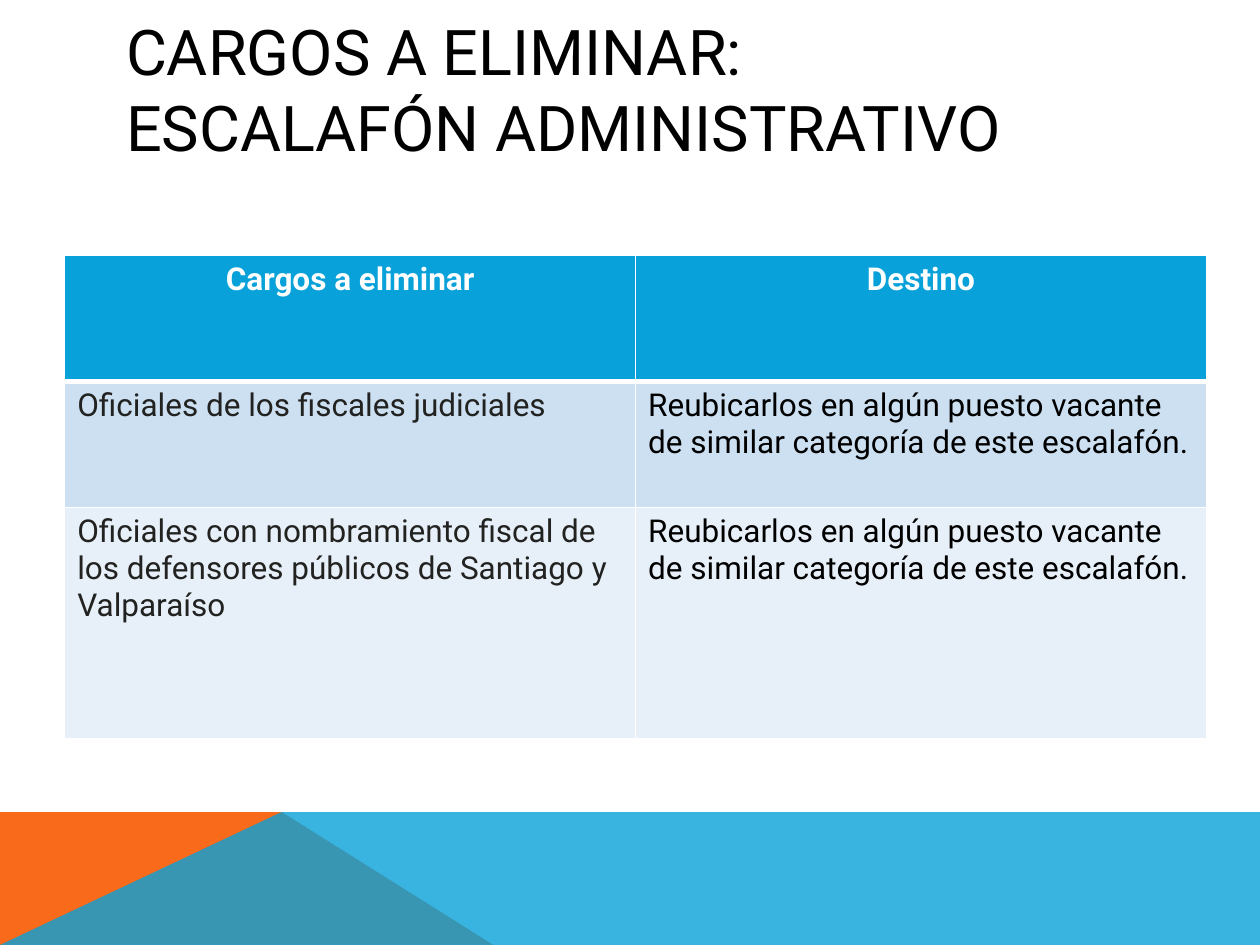
from lxml import etree
from pptx import Presentation
from pptx.dml.color import RGBColor
from pptx.enum.text import MSO_ANCHOR, MSO_AUTO_SIZE, PP_ALIGN
from pptx.oxml.ns import qn
from pptx.util import Pt

FONT = "Roboto"
ACCENT = "08A1D9"


def color(value):
    return RGBColor.from_string(value)


def set_border(cell, side, width):
    line = etree.SubElement(cell._tc.get_or_add_tcPr(), qn(f"a:{side}"), w=str(Pt(width)))
    fill = etree.SubElement(line, qn("a:solidFill"))
    etree.SubElement(fill, qn("a:srgbClr"), val="FFFFFF")


prs = Presentation()
prs.slide_width, prs.slide_height = Pt(720), Pt(540)
slide = prs.slides.add_slide(prs.slide_layouts[5])

# Footer: orange wedge under a translucent blue band
band_top, peak = 464.4, 160.6
footer = [
    ("F96A1B", 100, [(0, 540), (0, band_top), (peak, band_top), (281.5, 540)]),
    (ACCENT, 80, [(0, 540), (peak, band_top), (720, band_top), (720, 540)]),
]
for fill, opacity, points in footer:
    builder = slide.shapes.build_freeform(*points[0], scale=Pt(1))
    builder.add_line_segments(points[1:], close=True)
    wedge = builder.convert_to_shape()
    wedge.shadow.inherit = False
    wedge.line.fill.background()
    wedge.fill.solid()
    wedge.fill.fore_color.rgb = color(fill)
    if opacity < 100:
        srgb = wedge._element.spPr.find(".//" + qn("a:srgbClr"))
        etree.SubElement(srgb, qn("a:alpha"), val=str(opacity * 1000))

# Title
title = slide.shapes.title
title.left, title.top, title.width, title.height = Pt(64.8), Pt(28.8), Pt(592), Pt(43.2)
title.text_frame.text = "CARGOS A ELIMINAR:\vESCALAFÓN ADMINISTRATIVO"
title.text_frame.auto_size = MSO_AUTO_SIZE.NONE
title.text_frame.vertical_anchor = MSO_ANCHOR.MIDDLE
heading = title.text_frame.paragraphs[0]
heading.alignment = PP_ALIGN.LEFT
heading.font.name = FONT
heading.font.size = Pt(36)
heading.font.color.rgb = color("000000")

# Table of positions and where they go
destination = "Reubicarlos en algún puesto vacante de similar categoría de este escalafón."
rows = [
    ("Cargos a eliminar", "Destino"),
    ("Oficiales de los fiscales judiciales", destination),
    ("Oficiales con nombramiento fiscal de los defensores públicos de Santiago y Valparaíso",
     destination),
]
row_heights = [72, 72, 132]
row_fills = [ACCENT, "CCE0F1", "E7F0F8"]
positions = slide.shapes.add_table(3, 2, Pt(37), Pt(146), Pt(652.4), Pt(sum(row_heights))).table

for r, texts in enumerate(rows):
    positions.rows[r].height = Pt(row_heights[r])
    for c, text in enumerate(texts):
        cell = positions.cell(r, c)
        cell.text = text
        paragraph = cell.text_frame.paragraphs[0]
        paragraph.font.name = FONT
        paragraph.font.size = Pt(18)
        paragraph.font.bold = r == 0
        paragraph.alignment = PP_ALIGN.CENTER if r == 0 else PP_ALIGN.LEFT
        body_color = ("222221", "000000")[c]
        paragraph.font.color.rgb = color("FFFFFF" if r == 0 else body_color)
        # Borders precede the fill in the cell properties
        for side in ("lnL", "lnR", "lnT", "lnB"):
            under_header = (r, side) in ((0, "lnB"), (1, "lnT"))
            set_border(cell, side, 3 if under_header else 1)
        cell.fill.solid()
        cell.fill.fore_color.rgb = color(row_fills[r])

prs.save("out.pptx")
